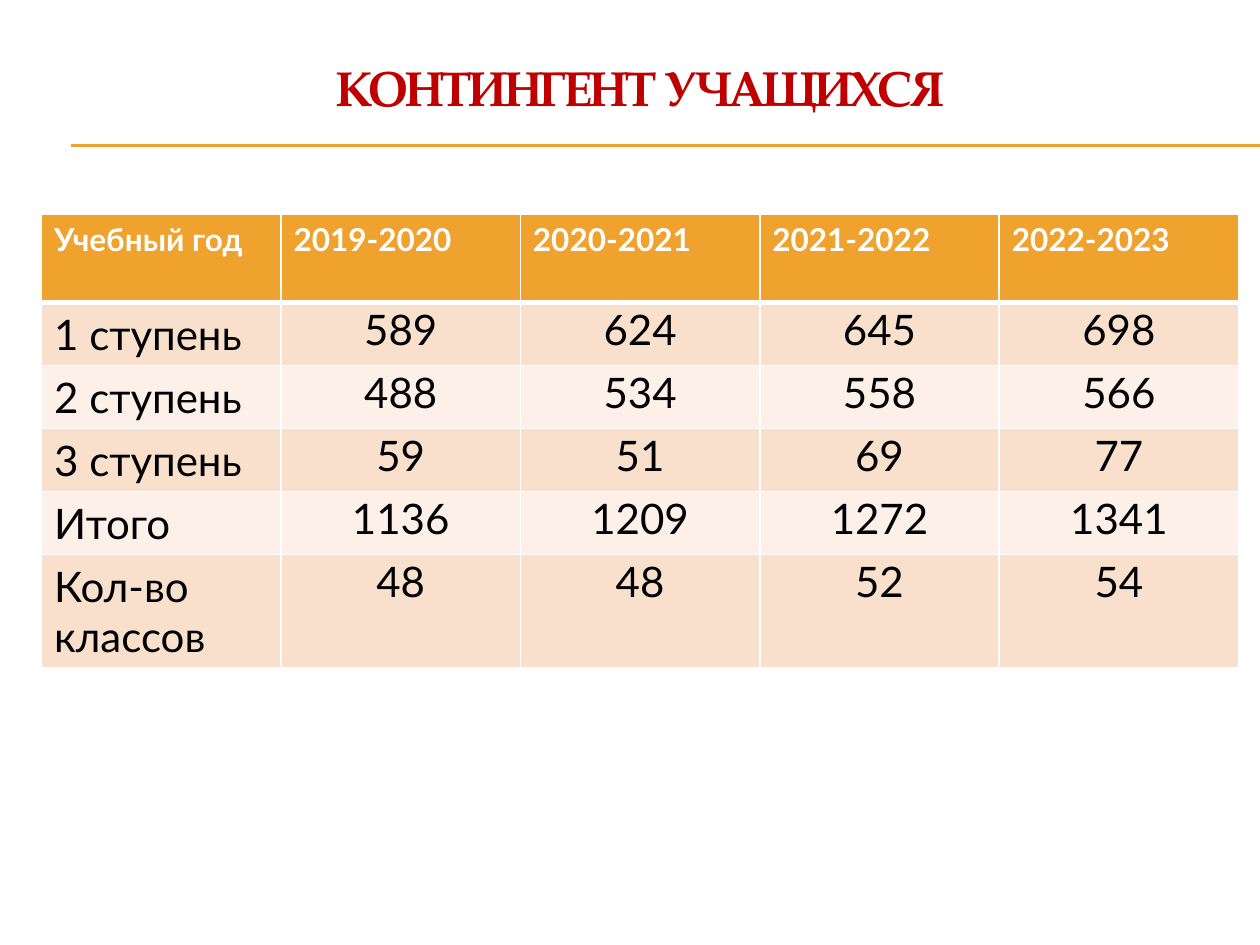
"""Build the slide with the student numbers by school year."""
from lxml import etree
from pptx import Presentation
from pptx.dml.color import RGBColor
from pptx.enum.shapes import MSO_CONNECTOR
from pptx.enum.text import MSO_ANCHOR, PP_ALIGN
from pptx.oxml.ns import qn
from pptx.util import Inches, Pt

STRAIGHT = MSO_CONNECTOR.STRAIGHT
MIDDLE = MSO_ANCHOR.MIDDLE
LEFT, CENTER = PP_ALIGN.LEFT, PP_ALIGN.CENTER

TITLE = "КОНТИНГЕНТ УЧАЩИХСЯ"
ROWS = [
    ("Учебный год", "2019-2020", "2020-2021", "2021-2022", "2022-2023"),
    ("1 ступень", "589", "624", "645", "698"),
    ("2 ступень", "488", "534", "558", "566"),
    ("3 ступень", "59", "51", "69", "77"),
    ("Итого", "1136", "1209", "1272", "1341"),
    ("Кол-во классов", "48", "48", "52", "54"),
]
ROW_HEIGHTS = [0.7, 0.5, 0.5, 0.5, 0.5, 0.9]
COL_WIDTH = 1.9
RULES_Y = [1.15, 1.16]
COLORS = {"title": "C00000", "accent": "F0A22E", "white": "FFFFFF",
          "text": "000000", "odd": "F9E0CD", "even": "FCF0E8"}
TITLE_FONT, BODY_FONT = "TeX Gyre Pagella", "Lato"


def rgb(name):
    return RGBColor.from_string(COLORS[name])


def add_run(p, text, font, size, color, bold):
    r = p.add_run()
    r.text = text
    r.font.name, r.font.size, r.font.bold = font, Pt(size), bold
    r.font.color.rgb = rgb(color)
    return r


def add_rule(s, y):
    line = s.shapes.add_connector(STRAIGHT, Inches(0.56), Inches(y), Inches(10), Inches(y))
    line.line.color.rgb = rgb("accent")
    line.line.width = Pt(0.75)
    etree.SubElement(line._element.spPr, qn("a:effectLst"))


def add_title(s):
    tf = s.shapes.add_textbox(Inches(0.33), Inches(0.5), Inches(9.5), Inches(0.92)).text_frame
    tf.word_wrap = True
    tf.vertical_anchor = MIDDLE
    tf.margin_top, tf.margin_bottom = 0, Inches(0.54)
    p = tf.paragraphs[0]
    p.alignment = CENTER
    r = add_run(p, TITLE, TITLE_FONT, 27.9, "title", True)
    r._r.get_or_add_rPr().set("spc", "-100")


def set_borders(cell, top, bottom):
    tcPr = cell._tc.get_or_add_tcPr()
    for side, width in (("L", 1), ("R", 1), ("T", top), ("B", bottom)):
        ln = etree.SubElement(tcPr, qn(f"a:ln{side}"), w=str(Pt(width)))
        fill = etree.SubElement(ln, qn("a:solidFill"))
        etree.SubElement(fill, qn("a:srgbClr"), val=COLORS["white"])


def fill_cell(cell, i, j, text):
    header = i == 0
    set_borders(cell, 3 if i == 1 else 1, 3 if header else 1)
    cell.fill.solid()
    cell.fill.fore_color.rgb = rgb("accent" if header else "odd" if i % 2 else "even")
    number = not header and j > 0
    if number:
        cell.margin_left = cell.margin_right = cell.margin_top = Inches(0.01)
        cell.margin_bottom = 0
    p = cell.text_frame.paragraphs[0]
    p.alignment = CENTER if number else LEFT
    add_run(p, text, BODY_FONT, 18 if header else 24, "white" if header else "text", header)


def add_students_table(s):
    cols = len(ROWS[0])
    table = s.shapes.add_table(len(ROWS), cols, Inches(0.33), Inches(1.7),
                               Inches(COL_WIDTH * cols), Inches(sum(ROW_HEIGHTS))).table
    for col in table.columns:
        col.width = Inches(COL_WIDTH)
    for i, (row, height) in enumerate(zip(ROWS, ROW_HEIGHTS)):
        table.rows[i].height = Inches(height)
        for j, text in enumerate(row):
            fill_cell(table.cell(i, j), i, j, text)


def main():
    prs = Presentation()
    prs.slide_width, prs.slide_height = Inches(10), Inches(7.5)
    s = prs.slides.add_slide(prs.slide_layouts[6])
    for y in RULES_Y:
        add_rule(s, y)
    add_title(s)
    add_students_table(s)
    prs.save("out.pptx")


if __name__ == "__main__":
    main()
